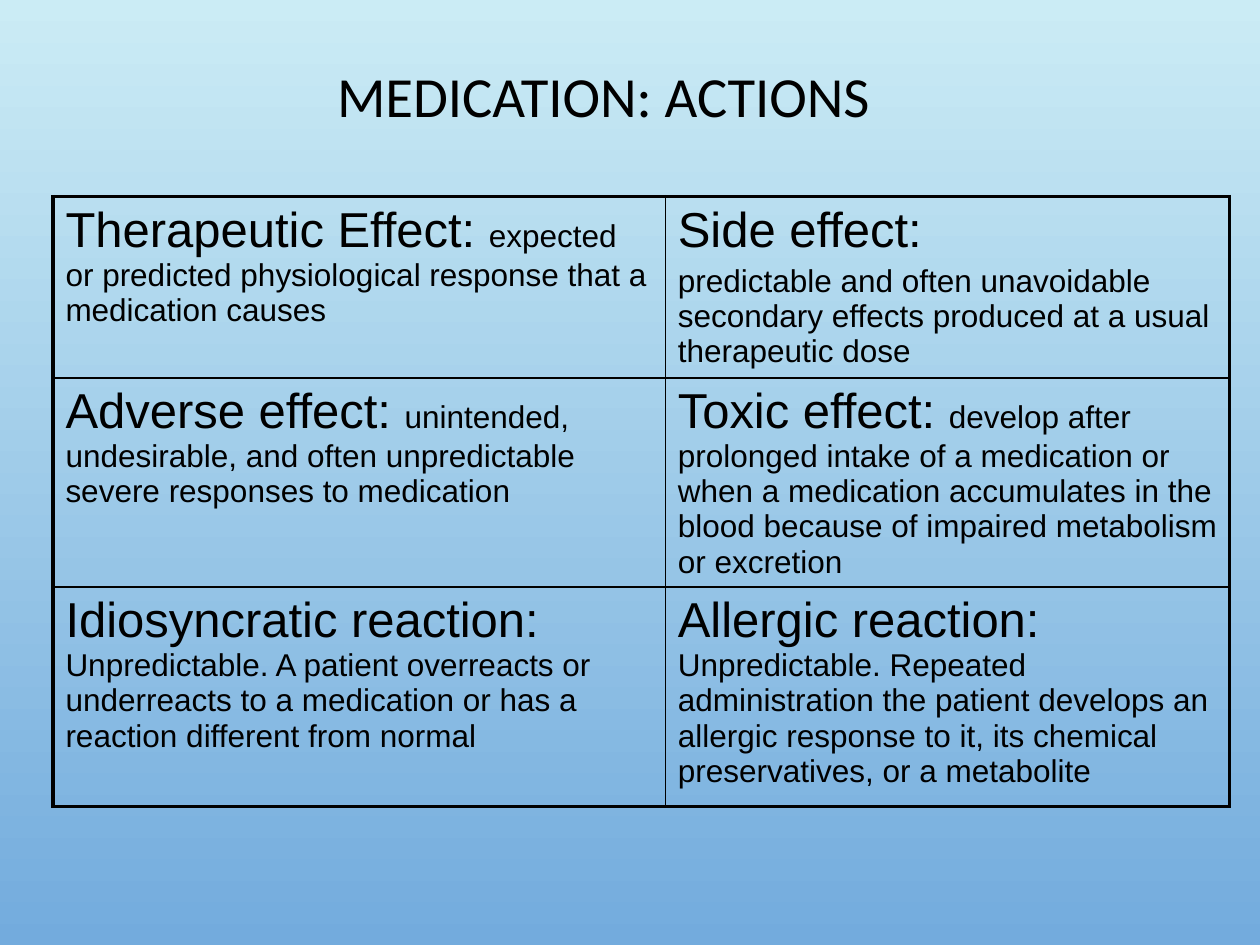
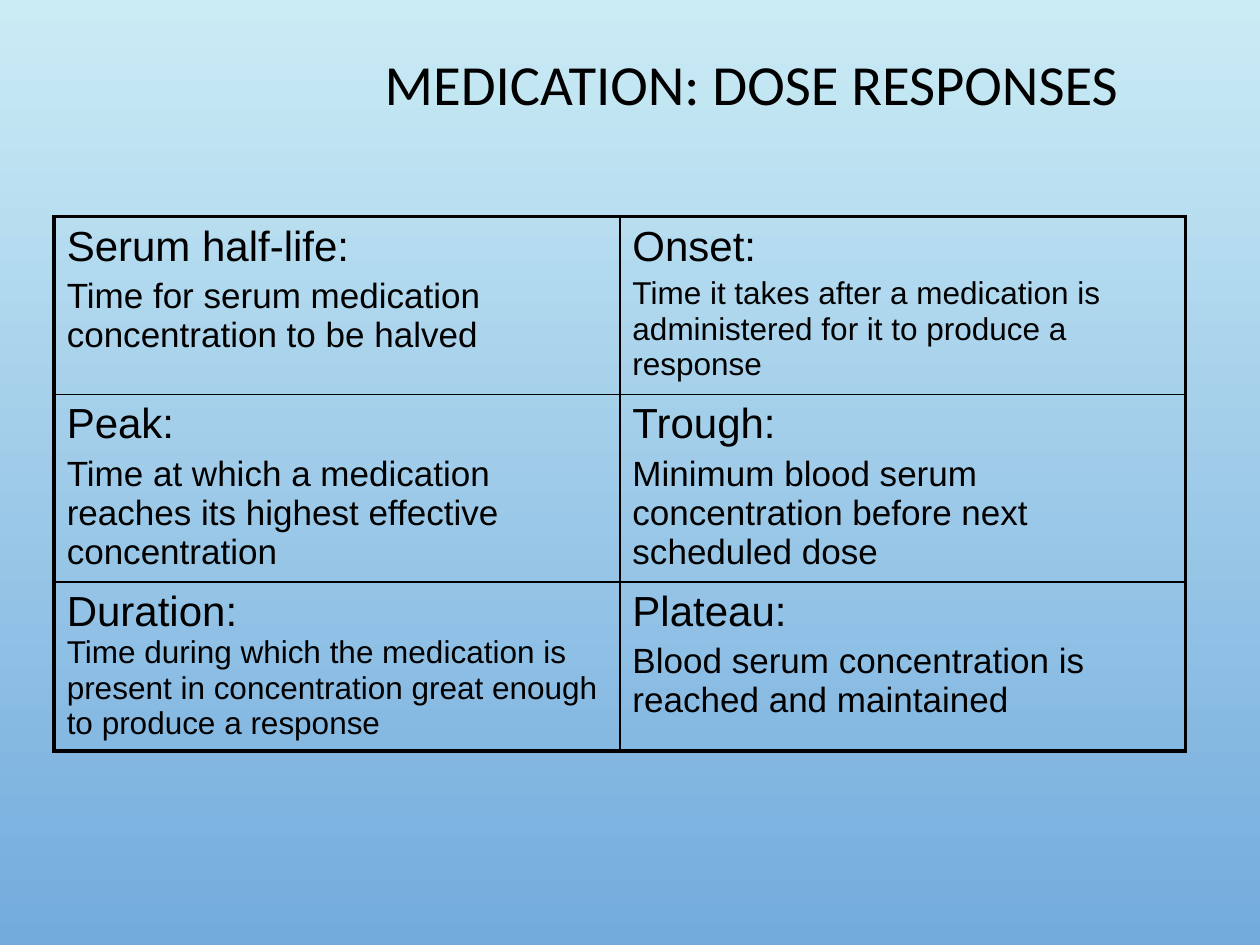
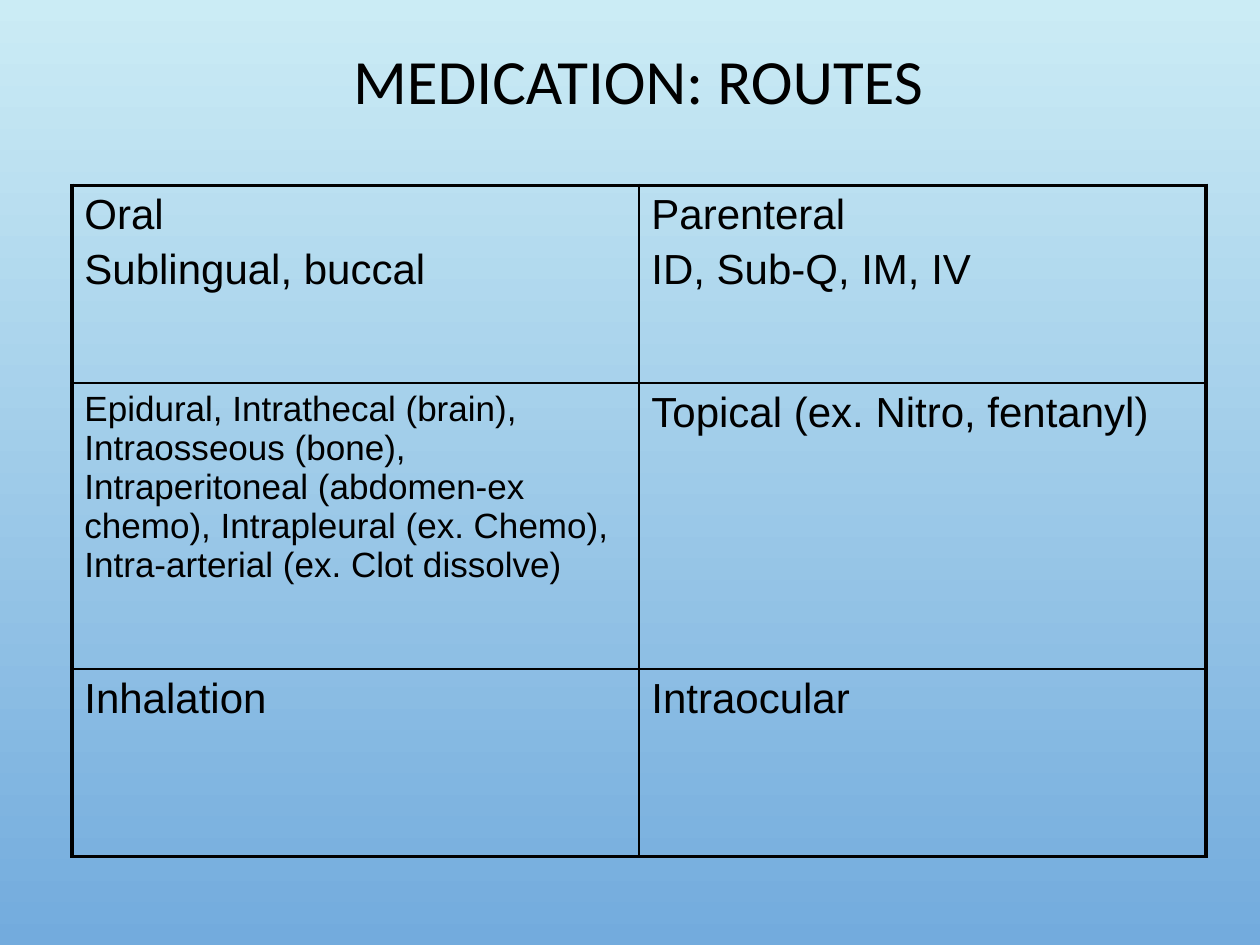
from lxml.etree import SubElement
from pptx import Presentation
from pptx.dml.color import RGBColor
from pptx.enum.text import MSO_ANCHOR, MSO_AUTO_SIZE, PP_ALIGN
from pptx.oxml.ns import qn
from pptx.util import Inches, Pt

SKY_TOP = RGBColor(0xCB, 0xEC, 0xF5)
SKY_BOTTOM = RGBColor(0x73, 0xAB, 0xDD)
INK = RGBColor(0, 0, 0)
TITLE_FONT, TABLE_FONT = "Calibri", "Arial"
OUTER_LINE, INNER_LINE = Pt(2.25), Pt(1)
GAP_SHARE = 0.2  # space above a paragraph, as a share of its text size


# Content: a cell is a list of paragraphs, a paragraph a list of (text, size)
def inline(term, meaning):
    """Term and meaning run on in one paragraph."""
    return [[(term + " ", 28), (meaning, 18)]]


def stacked(term, meaning, term_size=24, meaning_size=20):
    """Meaning in a paragraph below its term."""
    return [[(term, term_size)], [(meaning, meaning_size)]]


def single(text, size=24):
    return [[(text, size)]]


ACTIONS = [
    [inline("Therapeutic Effect:", "expected or predicted physiological "
            "response that a medication causes"),
     stacked("Side effect:", "predictable and often unavoidable secondary "
             "effects produced at a usual therapeutic dose", 28, 18)],
    [inline("Adverse effect:", "unintended, undesirable, and often "
            "unpredictable severe responses to medication"),
     inline("Toxic effect:", "develop after prolonged intake of a medication "
            "or when a medication accumulates in the blood because of "
            "impaired metabolism or excretion")],
    [inline("Idiosyncratic reaction:", "Unpredictable. A patient overreacts or "
            "underreacts to a medication or has a reaction different from normal"),
     inline("Allergic reaction:", "Unpredictable. Repeated administration the "
            "patient develops an allergic response to it, its chemical "
            "preservatives, or a metabolite")],
]
DOSE_RESPONSES = [
    [stacked("Serum half-life:",
             "Time for serum medication concentration to be halved"),
     stacked("Onset:", "Time it takes after a medication is administered for "
             "it to produce a response", meaning_size=18)],
    [stacked("Peak:", "Time at which a medication reaches its highest "
             "effective concentration"),
     stacked("Trough:", "Minimum blood serum concentration before next "
             "scheduled dose")],
    [stacked("Duration:", "Time during which the medication is present in "
             "concentration great enough to produce a response",
             meaning_size=18),
     stacked("Plateau:", "Blood serum concentration is reached and maintained")],
]
ROUTES = [
    [stacked("Oral", "Sublingual, buccal", meaning_size=24),
     stacked("Parenteral", "ID, Sub-Q, IM, IV", meaning_size=24)],
    [single("Epidural, Intrathecal (brain), Intraosseous (bone), "
            "Intraperitoneal (abdomen-ex chemo), Intrapleural (ex. Chemo), "
            "Intra-arterial (ex. Clot dissolve)", 20),
     single("Topical (ex. Nitro, fentanyl)")],
    [single("Inhalation"), single("Intraocular")],
]


def paint_background(master):
    fill = master.background.fill
    fill.gradient()
    fill.gradient_angle = 270  # counter-clockwise: runs from top to bottom
    for stop, color in zip(fill.gradient_stops, (SKY_TOP, SKY_BOTTOM)):
        stop.color.rgb = color


def style_font(font, name):
    font.name = name
    font.color.rgb = INK


def add_titled_slide(prs, heading, box, size):
    slide = prs.slides.add_slide(prs.slide_layouts[5])
    title = slide.shapes.title
    title.left, title.top, title.width, title.height = map(Inches, box)
    frame = title.text_frame
    frame.text = heading
    frame.auto_size = MSO_AUTO_SIZE.NONE
    frame.vertical_anchor = MSO_ANCHOR.MIDDLE
    line = frame.paragraphs[0]
    line.alignment = PP_ALIGN.CENTER
    line.line_spacing = 0.9
    line.font.size = Pt(size)
    style_font(line.font, TITLE_FONT)
    return slide


def set_borders(cell, widths):
    """Widths come in the order left, right, top, bottom."""
    props = cell._tc.get_or_add_tcPr()
    for side, width in zip("LRTB", widths):
        border = SubElement(props, qn(f"a:ln{side}"), w=str(int(width)))
        ink = SubElement(border, qn("a:solidFill"))
        SubElement(ink, qn("a:srgbClr"), val=str(INK))


def fill_cell(cell, paragraphs):
    frame = cell.text_frame
    for index, runs in enumerate(paragraphs):
        line = frame.add_paragraph() if index else frame.paragraphs[0]
        sizes = {size for _, size in runs}
        if index:
            line.space_before = Pt(GAP_SHARE * max(sizes))
        style_font(line.font, TABLE_FONT)
        if len(sizes) == 1:
            line.font.size = Pt(max(sizes))
        for text, size in runs:
            run = line.add_run()
            run.text = text
            if len(sizes) > 1:
                run.font.size = Pt(size)


def add_grid(slide, left, top, widths, heights, content):
    table = slide.shapes.add_table(
        len(heights), len(widths), Inches(left), Inches(top),
        Inches(sum(widths)), Inches(sum(heights))).table
    table.first_row = table.horz_banding = False
    for column, width in zip(table.columns, widths):
        column.width = Inches(width)
    for row, height in zip(table.rows, heights):
        row.height = Inches(height)

    last_row, last_col = len(heights) - 1, len(widths) - 1
    for r, row_content in enumerate(content):
        for c, paragraphs in enumerate(row_content):
            cell = table.cell(r, c)
            on_edge = (c == 0, c == last_col, r == 0, r == last_row)
            set_borders(cell, [OUTER_LINE if edge else INNER_LINE
                               for edge in on_edge])
            cell.fill.background()
            fill_cell(cell, paragraphs)
    return table


def main():
    prs = Presentation()
    prs.slide_width, prs.slide_height = Inches(10), Inches(7.5)
    paint_background(prs.slide_master)

    # Actions
    actions = add_titled_slide(prs, "MEDICATION: ACTIONS",
                               (2.09, 0.52, 5.4, 0.54), 32.4)
    add_grid(actions, 0.42, 1.56, (4.86, 4.48), (1.44, 1.66, 1.74), ACTIONS)

    # Dose responses
    doses = add_titled_slide(prs, "MEDICATION: DOSE RESPONSES",
                             (2.93, 0.42, 6.07, 0.55), 32.4)
    dose_grid = add_grid(doses, 0.43, 1.72, (4.49, 4.49), (1.41, 1.49, 1.34),
                         DOSE_RESPONSES)
    # The long duration text sits close under its term
    dose_grid.cell(2, 0).text_frame.paragraphs[1].space_before = Pt(0)

    # Routes
    routes = add_titled_slide(prs, "MEDICATION: ROUTES",
                              (2.37, 0.31, 5.39, 0.71), 36)
    add_grid(routes, 0.57, 1.47, (4.5, 4.5), (1.57, 2.27, 1.49), ROUTES)

    prs.save("out.pptx")


if __name__ == "__main__":
    main()
